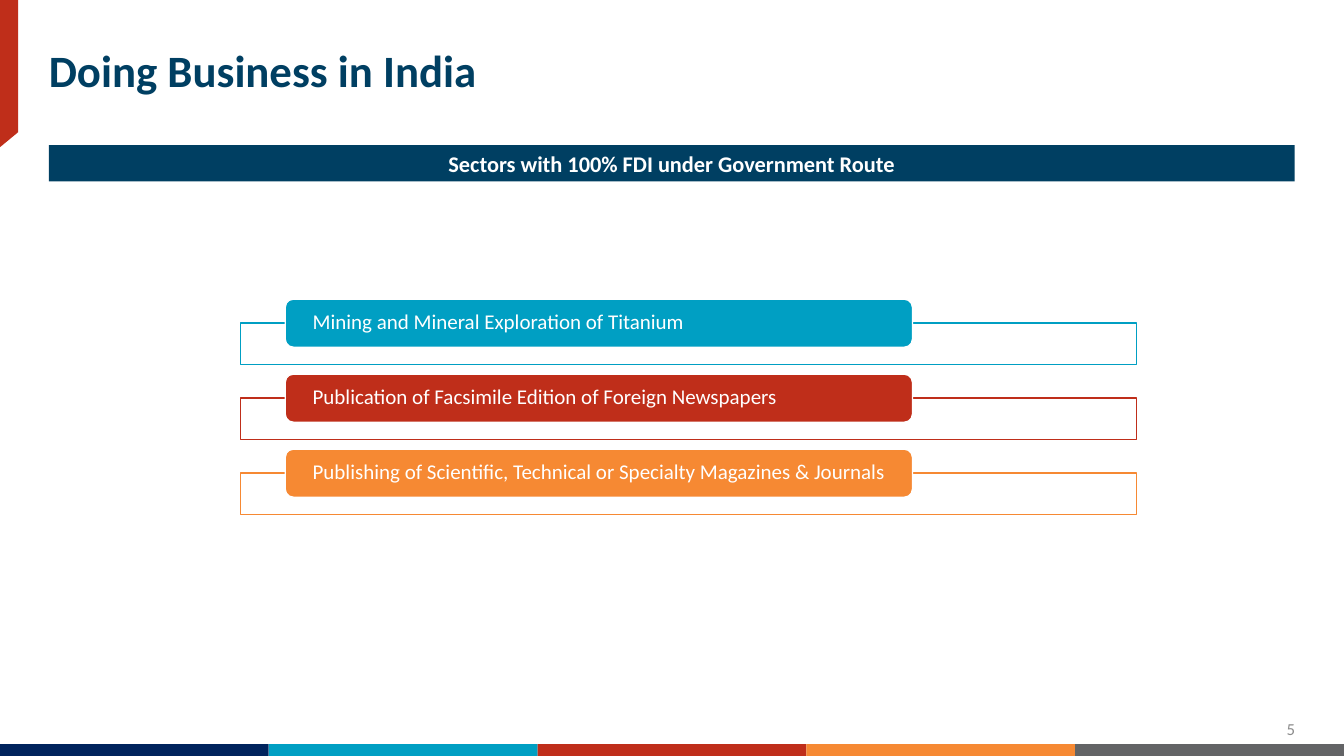
import pptx
import pptx.util
import pptx.dml.color
import pptx.enum.shapes
import pptx.enum.text
from dataclasses import dataclass
from lxml import etree
from pptx.util import Cm

SHAPE = pptx.enum.shapes.MSO_SHAPE
ALIGN = pptx.enum.text.PP_ALIGN
ANCHOR = pptx.enum.text.MSO_ANCHOR


@dataclass(frozen=True)
class Theme:
    """Colours, type sizes and font of the slide."""
    font: str = "Calibri"
    white: str = "FFFFFF"
    navy: str = "003F62"
    ink: str = "00235D"
    cyan: str = "009FC3"
    red: str = "BF2E1A"
    orange: str = "F68933"
    slate: str = "636466"
    grey: str = "8C8C8C"
    title: int = 32
    banner: int = 16
    sector: int = 15
    number: int = 12


THEME = Theme()
WIDTH, HEIGHT = 33.87, 19.05


def rgb(color):
    """Turn a hex string into a colour."""
    return pptx.dml.color.RGBColor.from_string(color)


def paint(sp, fill, line=None):
    """Fill a shape and give it a thin outline or none."""
    sp.shadow.inherit = False
    sp.fill.solid()
    sp.fill.fore_color.rgb = rgb(fill)
    if line:
        sp.line.color.rgb = rgb(line)
        sp.line.width = pptx.util.Pt(1)
    else:
        sp.line.fill.background()


def add_box(s, kind, x, y, w, h, fill, line=None):
    """Place a painted preset shape, measured in centimetres."""
    sp = s.shapes.add_shape(kind, Cm(x), Cm(y), Cm(w), Cm(h))
    paint(sp, fill, line)
    return sp


def write(sp, text, size, color, bold=False, align=ALIGN.LEFT,
          anchor=ANCHOR.MIDDLE, left=0, right=0, spacing=1.0):
    """Set one paragraph of text in a shape."""
    tf = sp.text_frame
    tf.word_wrap = True
    tf.vertical_anchor = anchor
    tf.margin_left, tf.margin_right = Cm(left), Cm(right)
    tf.margin_top = tf.margin_bottom = 0
    p = tf.paragraphs[0]
    p.text = text
    p.alignment = align
    p.line_spacing = spacing
    p.font.name = THEME.font
    p.font.size = pptx.util.Pt(size)
    p.font.bold = bold
    p.font.color.rgb = rgb(color)


def add_text(s, x, y, w, h, text, size, color, **style):
    """Place a text box, measured in centimetres."""
    write(s.shapes.add_textbox(Cm(x), Cm(y), Cm(w), Cm(h)), text, size, color, **style)


def add_corner_tab(s, x, y, w, h):
    """Draw the slanted tab at the top left."""
    slant = 0.38
    builder = s.shapes.build_freeform(Cm(x), Cm(y))
    builder.add_line_segments([(Cm(x), Cm(y + h)), (Cm(x + w), Cm(y + h - slant)),
                               (Cm(x + w), Cm(y))])
    paint(builder.convert_to_shape(), THEME.red)


def add_footer(s, x, y, w, h, number):
    """Draw the colour strip with the slide number above it."""
    colors = (THEME.ink, THEME.cyan, THEME.red, THEME.orange, THEME.slate)
    step = w / len(colors)
    for i, color in enumerate(colors):
        add_box(s, SHAPE.RECTANGLE, x + i * step, y, step, h, color)
    add_text(s, x + w - 2.96, y - 0.64, 1.73, 0.51, number, THEME.number, THEME.grey,
             align=ALIGN.RIGHT, anchor=ANCHOR.BOTTOM)


def add_heading(s, x, y, w, title, banner):
    """Set the title and the banner below it."""
    add_text(s, x, y, w, 1.22, title, THEME.title, THEME.navy, bold=True,
             anchor=ANCHOR.TOP, spacing=0.9)
    sp = add_box(s, SHAPE.RECTANGLE, x, y + 2.42, w, 0.91, THEME.navy)
    write(sp, banner, THEME.banner, THEME.white, bold=True, align=ALIGN.CENTER)


def add_sectors(s, x, y, w, pitch, sectors):
    """Stack sector labels, each overlapping an outlined frame."""
    for i, (label, color) in enumerate(sectors):
        top = y + i * pitch
        frame = add_box(s, SHAPE.RECTANGLE, x, top + 0.6, w, 1.04, THEME.white, color)
        fill = frame.fill.fore_color._xFill[0]
        etree.SubElement(fill, pptx.oxml.ns.qn("a:alpha"), val="90000")
        pill = add_box(s, SHAPE.ROUNDED_RECTANGLE, x + 1.13, top, 0.7 * w, 1.21,
                       color, THEME.white)
        write(pill, label, THEME.sector, THEME.white, left=0.63, right=0.2, spacing=0.9)


def main():
    """Build and save the slide."""
    prs = pptx.Presentation()
    prs.slide_width, prs.slide_height = Cm(WIDTH), Cm(HEIGHT)
    s = prs.slides.add_slide(prs.slide_layouts[6])
    add_corner_tab(s, 0, 0, 0.46, 3.71)
    add_footer(s, 0, HEIGHT - 0.3, WIDTH, 0.3, "5")
    add_heading(s, 1.23, 1.24, 31.4, "Doing Business in India",
                "Sectors with 100% FDI under Government Route")
    add_sectors(s, 6.06, 7.54, 22.58, 1.89, (
        ("Mining and Mineral Exploration of Titanium", THEME.cyan),
        ("Publication of Facsimile Edition of Foreign Newspapers", THEME.red),
        ("Publishing of Scientific, Technical or Specialty Magazines & Journals",
         THEME.orange)))
    prs.save("out.pptx")


if __name__ == "__main__":
    main()
